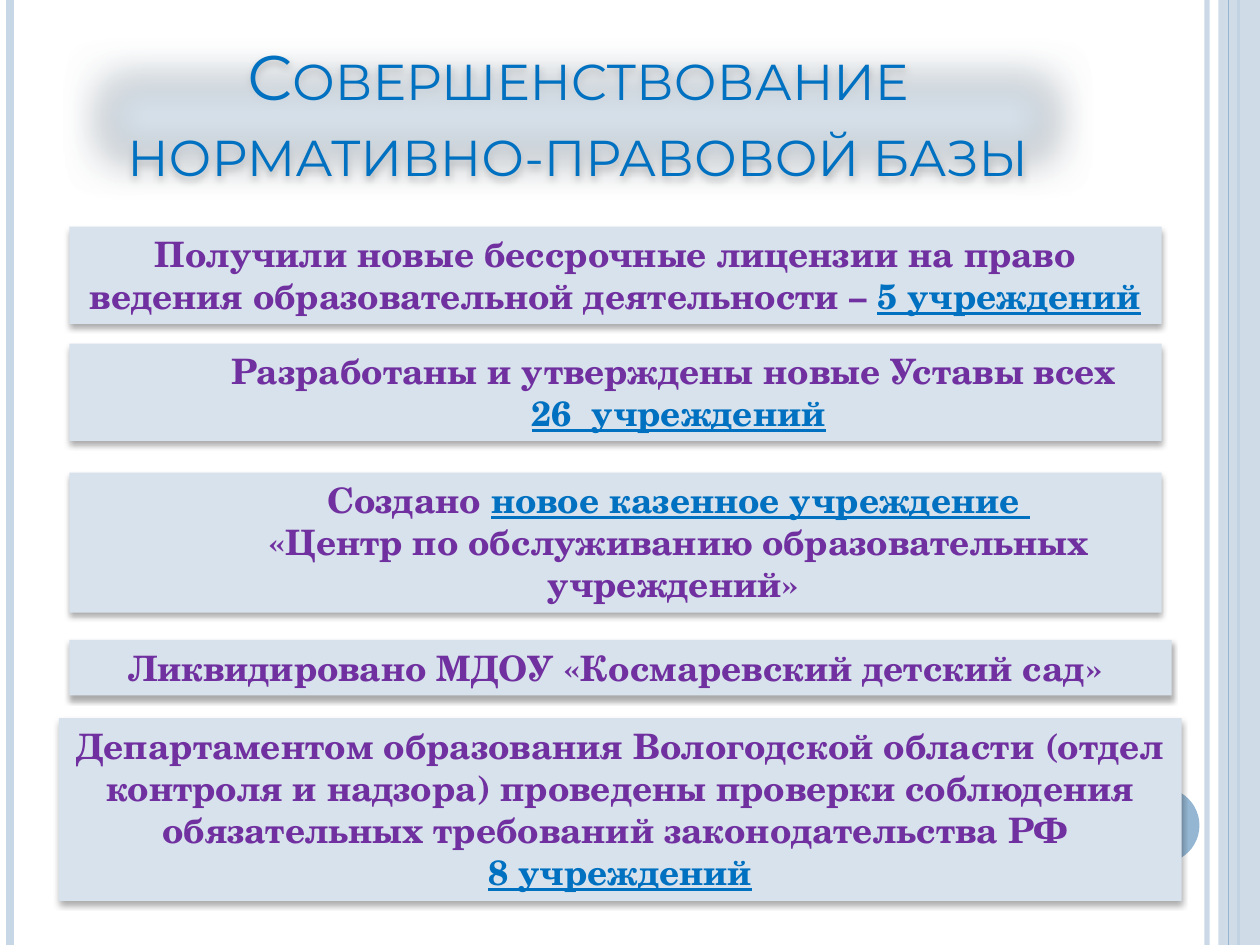
from lxml.etree import SubElement
from pptx import Presentation
from pptx.dml.color import RGBColor
from pptx.enum.shapes import MSO_CONNECTOR, MSO_SHAPE
from pptx.enum.text import MSO_ANCHOR, MSO_AUTO_SIZE, PP_ALIGN
from pptx.oxml.ns import qn
from pptx.util import Cm, Pt

PALE_BLUE = RGBColor(0xC8, 0xD7, 0xE5)
MID_BLUE = RGBColor(0x94, 0xB6, 0xD2)
PANEL_BLUE = RGBColor(0xD7, 0xE2, 0xEC)
ACCENT_BLUE = RGBColor(0x00, 0x70, 0xC0)
PURPLE = RGBColor(0x70, 0x30, 0xA0)
TITLE_FONT = "Montserrat"
BODY_FONT = "TeX Gyre Schola"

WIDTH, HEIGHT = 25.4, 19.05
PANEL_LEFT, PANEL_WIDTH = 1.4, 22.02

# Side stripes: x in cm, thickness in points, colour, opacity in percent
STRIPES = [
    (24.33, 3, PALE_BLUE, 93),
    (0.2, 4.5, PALE_BLUE, 100),
    (24.97, 1.5, MID_BLUE, 100),
]
INNER_STRIPE = (24.77, 0.75, MID_BLUE, 100)

# Panels: left, top, width, height, text level, paragraphs of (text, is_key)
PANELS = [
    (PANEL_LEFT, 4.57, PANEL_WIDTH, 1.96, 0, [
        [("Получили новые бессрочные лицензии на право ведения "
          "образовательной деятельности – ", False),
         ("5 учреждений", True)]]),
    (PANEL_LEFT, 6.93, PANEL_WIDTH, 1.96, 2, [
        [("Разработаны и утверждены новые Уставы всех ", False)],
        [("26  учреждений", True)]]),
    (PANEL_LEFT, 9.53, PANEL_WIDTH, 2.82, 2, [
        [("Создано ", False), ("новое казенное учреждение ", True)],
        [("«Центр по обслуживанию образовательных учреждений» ", False)]]),
    (1.19, 14.48, 22.63, 3.68, 0, [
        [("Департаментом образования Вологодской области (отдел контроля "
          "и надзора) проведены проверки соблюдения обязательных "
          "требований законодательства РФ ", False)],
        [("8 учреждений", True)]]),
    (PANEL_LEFT, 12.9, 22.22, 1.12, 0, [
        [("Ликвидировано МДОУ «Космаревский детский сад» ", False)]]),
]


def set_opacity(shape, percent):
    for colour in shape._element.spPr.iter(qn("a:srgbClr")):
        SubElement(colour, qn("a:alpha"), val=str(percent * 1000))


def add_shadow(shape, opacity, blur, distance):
    """Add a downward shadow; blur and distance are in points."""
    effects = SubElement(shape._element.spPr, qn("a:effectLst"))
    shadow = SubElement(effects, qn("a:outerShdw"), blurRad=str(Pt(blur)),
                        dist=str(Pt(distance)), dir="5400000",
                        rotWithShape="0")
    colour = SubElement(shadow, qn("a:srgbClr"), val="000000")
    SubElement(colour, qn("a:alpha"), val=str(opacity * 1000))
    return effects


def add_text(paragraph, text, font=BODY_FONT, size=20, colour=PURPLE,
             bold=True, underline=False, small_caps=False):
    run = paragraph.add_run()
    run.text = text
    run.font.name, run.font.size = font, Pt(size)
    run.font.bold, run.font.underline = bold, underline
    run.font.color.rgb = colour
    if small_caps:
        run.font._element.set("cap", "small")


def add_stripe(slide, x, thickness, colour, opacity):
    stripe = slide.shapes.add_connector(
        MSO_CONNECTOR.STRAIGHT, Cm(x), 0, Cm(x), Cm(HEIGHT))
    stripe.line.color.rgb = colour
    stripe.line.width = Pt(thickness)
    if opacity < 100:
        set_opacity(stripe, opacity)
    SubElement(stripe._element.spPr, qn("a:effectLst"))


def add_plain_shape(slide, kind, left, top, width, height, colour):
    shape = slide.shapes.add_shape(
        kind, Cm(left), Cm(top), Cm(width), Cm(height))
    shape.shadow.inherit = False
    shape.fill.solid()
    shape.fill.fore_color.rgb = colour
    shape.line.fill.background()
    return shape


def add_side_decoration(slide):
    for stripe in STRIPES:
        add_stripe(slide, *stripe)
    band = add_plain_shape(slide, MSO_SHAPE.RECTANGLE,
                           24.56, 0, WIDTH - 24.56, HEIGHT, PALE_BLUE)
    set_opacity(band, 87)
    add_stripe(slide, *INNER_STRIPE)
    add_plain_shape(slide, MSO_SHAPE.OVAL, 22.66, 15.88, 1.52, 1.52, MID_BLUE)


def format_title(slide, text):
    title = slide.shapes.title
    title.left, title.top = Cm(1.27), Cm(0.76)
    title.width, title.height = Cm(20.75), Cm(3.18)
    title.fill.solid()
    title.fill.fore_color.rgb = PANEL_BLUE
    title.line.color.rgb = MID_BLUE
    title.line.width = Pt(0.75)
    effects = add_shadow(title, 35, 4, 2)
    SubElement(effects, qn("a:softEdge"), rad=str(Pt(25)))
    frame = title.text_frame
    frame.auto_size = MSO_AUTO_SIZE.NONE
    frame.vertical_anchor = MSO_ANCHOR.BOTTOM
    paragraph = frame.paragraphs[0]
    paragraph.alignment = PP_ALIGN.CENTER
    add_text(paragraph, text, font=TITLE_FONT, size=36, colour=ACCENT_BLUE,
             bold=False, small_caps=True)


def add_panel(slide, left, top, width, height, level, paragraphs):
    panel = slide.shapes.add_textbox(
        Cm(left), Cm(top), Cm(width), Cm(height))
    panel.fill.solid()
    panel.fill.fore_color.rgb = PANEL_BLUE
    add_shadow(panel, 32, 3.5, 2.2)
    frame = panel.text_frame
    frame.word_wrap = True
    frame.auto_size = MSO_AUTO_SIZE.SHAPE_TO_FIT_TEXT
    for index, parts in enumerate(paragraphs):
        paragraph = frame.add_paragraph() if index else frame.paragraphs[0]
        paragraph.alignment = PP_ALIGN.CENTER
        paragraph.level = level
        properties = paragraph._p.get_or_add_pPr()
        properties.set("marL", str(Cm(1.27 * level)))
        properties.set("indent", "0")
        for text, is_key in parts:
            add_text(paragraph, text, underline=is_key,
                     colour=ACCENT_BLUE if is_key else PURPLE)


def main():
    deck = Presentation()
    deck.slide_width, deck.slide_height = Cm(WIDTH), Cm(HEIGHT)
    slide = deck.slides.add_slide(deck.slide_layouts[5])
    add_side_decoration(slide)
    format_title(slide, "Совершенствование нормативно-правовой базы")
    for panel in PANELS:
        add_panel(slide, *panel)
    deck.save("out.pptx")


if __name__ == "__main__":
    main()
